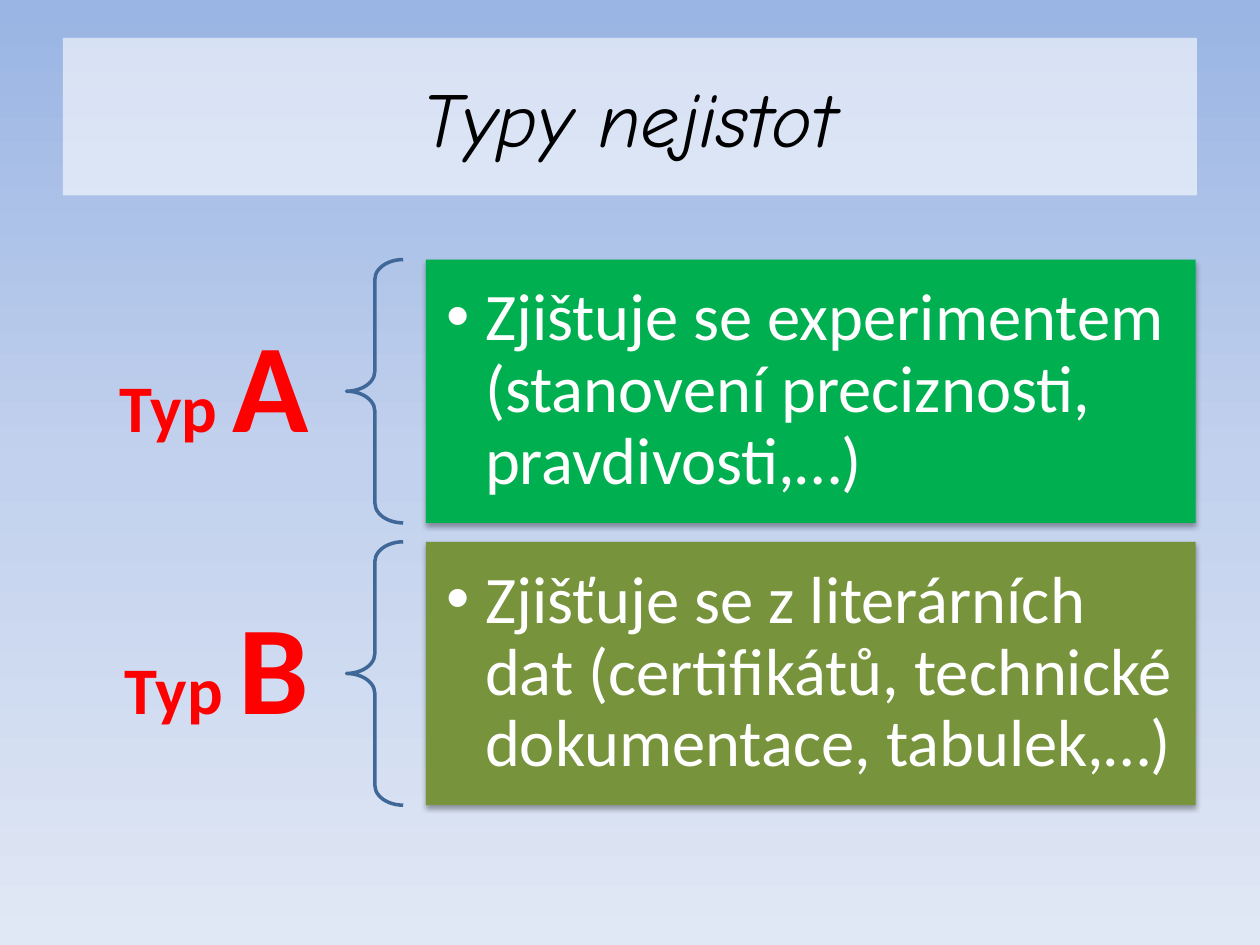
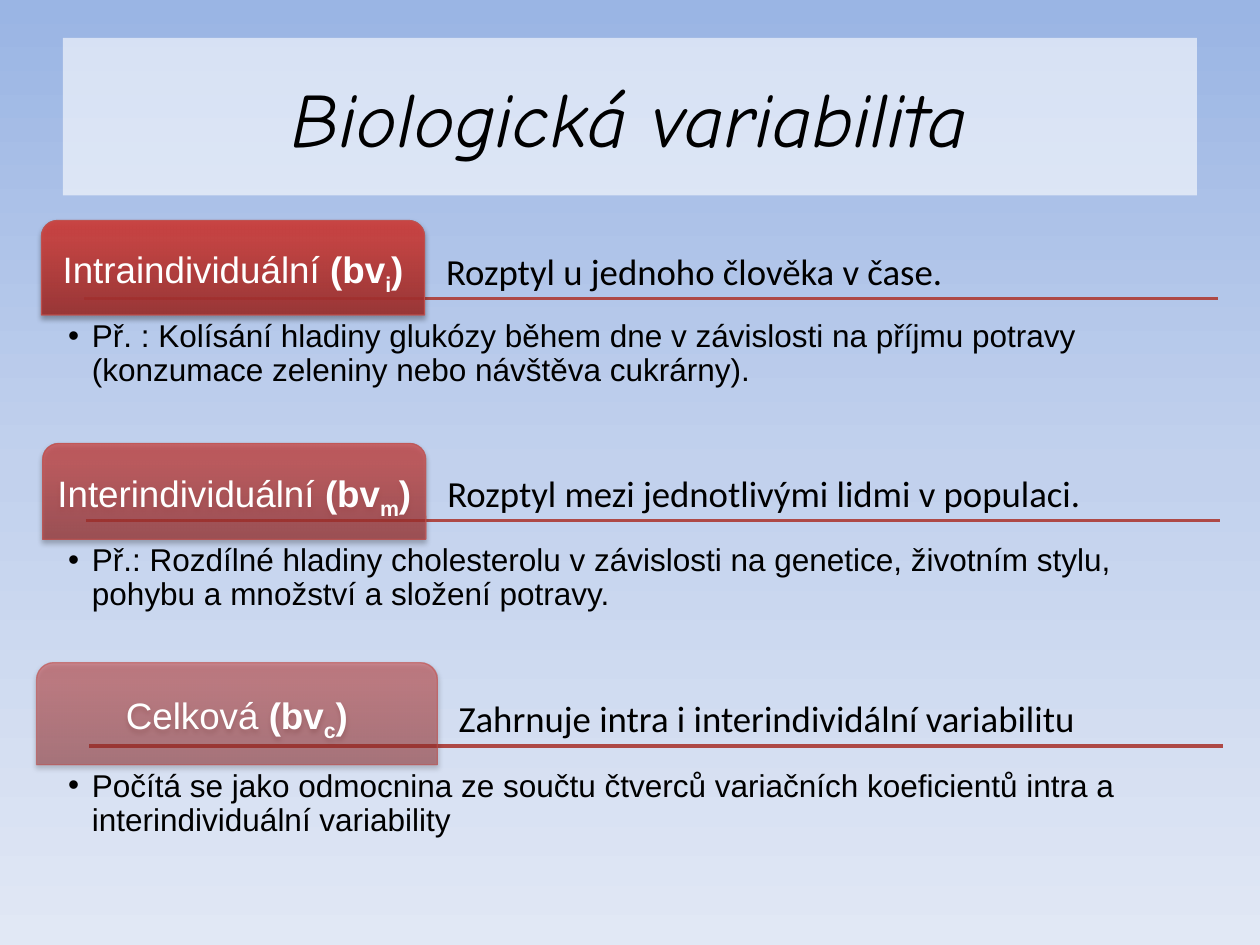
from lxml.etree import SubElement as Sub
from pptx import Presentation
from pptx.dml.color import RGBColor as RGB
from pptx.enum.shapes import MSO_CONNECTOR as CONN, MSO_SHAPE as SHAPE
from pptx.enum.text import MSO_ANCHOR as ANCHOR, PP_ALIGN as ALIGN
from pptx.oxml.ns import qn
from pptx.util import Emu, Inches, Pt

COLORS = {
    "black": "000000", "white": "FFFFFF", "label": "FF0000",
    "brace": "3F6797", "type_a": "00B050", "type_b": "77933C",
    "rule": "AE4946", "tab_line": "C0504D",
}
BACKGROUND = [(0, "9AB5E4"), (50, "C2D1ED"), (100, "E1E8F5")]
TAB_FILL = [(0, "9C2F2D"), (80, "CB3E3A"), (100, "CE3B37")]

# Text formats
TITLE = dict(name="Comic Neue", size=Pt(44), italic=True, color="black")
TYPE_WORD = dict(name="Calibri", size=Pt(38), bold=True, color="label")
TYPE_LETTER = dict(TYPE_WORD, size=Pt(72))
TYPE_TEXT = dict(name="Calibri", size=Pt(38), color="white")
TAB = dict(name="Arial", size=Pt(21), color="white")
TAB_BOLD = dict(TAB, bold=True)
MEANING = dict(name="Calibri", size=Pt(21), color="black")
DETAIL = dict(name="Arial", size=Pt(18), color="black")


# Fill, line and effect helpers
def set_alpha(props, percent):
    """Set the opacity of every solid colour under props."""
    for color in props.iter(qn("a:srgbClr")):
        Sub(color, qn("a:alpha"), val=str(percent * 1000))


def set_gradient(fill, props, stops, angle):
    fill.solid()
    solid = props.find(qn("a:solidFill"))
    grad = solid.makeelement(qn("a:gradFill"), {"rotWithShape": "1"})
    gs_list = Sub(grad, qn("a:gsLst"))
    for position, color in stops:
        gs = Sub(gs_list, qn("a:gs"), pos=str(position * 1000))
        Sub(gs, qn("a:srgbClr"), val=color)
    Sub(grad, qn("a:lin"), ang=str(angle * 60000), scaled="0")
    props.replace(solid, grad)


def add_shadow(sp):
    effects = sp._element.spPr.find(qn("a:effectLst"))
    shadow = Sub(effects, qn("a:outerShdw"), blurRad=str(Pt(3.1)),
                 dist=str(Pt(1.8)), dir="5400000", rotWithShape="0")
    color = Sub(shadow, qn("a:srgbClr"), val=COLORS["black"])
    Sub(color, qn("a:alpha"), val="35000")


def set_line(line, color, width):
    line.color.rgb = RGB.from_string(COLORS[color])
    line.width = Pt(width)


# Text helpers
def add_bullet(p, hang):
    pPr = p._p.get_or_add_pPr()
    pPr.set("marL", str(Inches(hang)))
    pPr.set("indent", str(-Inches(hang)))
    Sub(pPr, qn("a:buFont"), typeface="Arial")
    Sub(pPr, qn("a:buChar"), char="•")


def write(sp, runs, align=ALIGN.LEFT, anchor=ANCHOR.MIDDLE,
          insets=(0.04, 0.04), hang=None, spacing=0.9):
    tf = sp.text_frame
    tf.word_wrap = True
    tf.vertical_anchor = anchor
    side, end = map(Inches, insets)
    tf.margin_left = tf.margin_right = side
    tf.margin_top = tf.margin_bottom = end
    p = tf.paragraphs[0]
    p.alignment = align
    p.line_spacing = spacing
    if hang:
        add_bullet(p, hang)
    for text, fmt in runs:
        r = p.add_run()
        r.text = text
        for key, value in fmt.items():
            if key == "color":
                r.font.color.rgb = RGB.from_string(COLORS[value])
            elif key == "baseline":
                r._r.get_or_add_rPr().set("baseline", value)
            else:
                setattr(r.font, key, value)


# Element helpers
def add_shape(s, kind, box, fill=None):
    sp = s.shapes.add_shape(kind, *map(Inches, box))
    sp.shadow.inherit = False
    sp.line.fill.background()
    if fill:
        sp.fill.solid()
        sp.fill.fore_color.rgb = RGB.from_string(COLORS[fill])
    else:
        sp.fill.background()
    return sp


def add_text(s, box, runs, **layout):
    write(s.shapes.add_textbox(*map(Inches, box)), runs, **layout)


def add_slide(prs, title):
    s = prs.slides.add_slide(prs.slide_layouts[6])
    band = add_shape(s, SHAPE.RECTANGLE, (0.5, 0.3, 9, 1.25), "white")
    set_alpha(band._element.spPr, 60)
    write(band, [(title, TITLE)], ALIGN.CENTER, insets=(0.1, 0.05), spacing=1)
    return s


def add_type(s, top, letter, text, fill):
    height = 2.09
    add_text(s, (0.5, top + 0.39, 2.25, 1.31),
             [("Typ ", TYPE_WORD), (letter, TYPE_LETTER)],
             align=ALIGN.RIGHT, insets=(0.3, 0.11))
    brace = add_shape(s, SHAPE.LEFT_BRACE, (2.75, top, 0.45, height))
    brace.adjustments[0], brace.adjustments[1] = 0.35, 0.5
    set_line(brace.line, "brace", 2)
    panel = add_shape(s, SHAPE.RECTANGLE, (3.38, top, 6.11, height), fill)
    add_shadow(panel)
    write(panel, [(text, TYPE_TEXT)], insets=(0.16, 0.16), hang=0.31)


def add_rule(s, left, y):
    cn = s.shapes.add_connector(CONN.STRAIGHT, *map(Inches, (left, y, left + 9, y)))
    set_line(cn.line, "rule", 2)
    Sub(cn._element.spPr, qn("a:effectLst"))


def add_variability(s, tab_box, rule_y, opacity, name, index, meaning, detail):
    left, top, width, height = tab_box
    text_left = left + width + 0.06
    add_text(s, (text_left, rule_y - 0.49, 9.25 - text_left, 0.49),
             [(meaning, MEANING)], anchor=ANCHOR.BOTTOM, insets=(0.11, 0.04))

    tab = add_shape(s, SHAPE.ROUND_2_SAME_RECTANGLE, tab_box)
    tab.adjustments[0], tab.adjustments[1] = 0.167, 0
    set_gradient(tab.fill, tab._element.spPr, TAB_FILL, 270)
    set_line(tab.line, "tab_line", 0.75)
    set_alpha(tab._element.spPr, opacity)
    add_shadow(tab)
    write(tab, [(name + " ", TAB), ("(bv", TAB_BOLD),
                (index, dict(TAB_BOLD, baseline="-25000")), (")", TAB_BOLD)],
          ALIGN.CENTER)

    add_text(s, (0.5, top + height, 9, 0.97), [(detail, DETAIL)],
             anchor=ANCHOR.TOP, hang=0.19)


# Slides
def add_types_slide(prs):
    s = add_slide(prs, "Typy nejistot")
    add_type(s, 2.06, "A", "Zjištuje se experimentem (stanovení preciznosti, "
             "pravdivosti,…)", "type_a")
    add_type(s, 4.3, "B", "Zjišťuje se z literárních dat (certifikátů, technické "
             "dokumentace, tabulek,…)", "type_b")


def add_variability_slide(prs):
    s = add_slide(prs, "Biologická variabilita")
    for left, y in ((0.71, 5.92), (0.68, 4.13), (0.67, 2.37)):
        add_rule(s, left, y)
    add_variability(
        s, (0.33, 1.75, 3.04, 0.75), 2.37, 90, "Intraindividuální", "i",
        "Rozptyl u jednoho člověka v čase.",
        "Př. : Kolísání hladiny glukózy během dne v závislosti na příjmu potravy "
        "(konzumace zeleniny nebo návštěva cukrárny).")
    add_variability(
        s, (0.34, 3.52, 3.04, 0.76), 4.13, 70, "Interindividuální", "m",
        "Rozptyl mezi jednotlivými lidmi v populaci.",
        "Př.: Rozdílné hladiny cholesterolu v závislosti na genetice, životním "
        "stylu, pohybu a množství a složení potravy.")
    add_variability(
        s, (0.29, 5.26, 3.18, 0.81), 5.92, 50, "Celková", "c",
        "Zahrnuje intra i interindividální variabilitu",
        "Počítá se jako odmocnina ze součtu čtverců variačních koeficientů intra "
        "a interindividuální variability")


def main():
    prs = Presentation()
    prs.slide_width, prs.slide_height = Inches(10), Inches(7.5)
    # Shared background on the master
    master = prs.slide_master
    fill = master.background.fill
    fill.solid()
    set_gradient(fill, master.element.xpath(".//p:bgPr")[0], BACKGROUND, 90)
    add_types_slide(prs)
    add_variability_slide(prs)
    prs.save("out.pptx")


if __name__ == "__main__":
    main()
